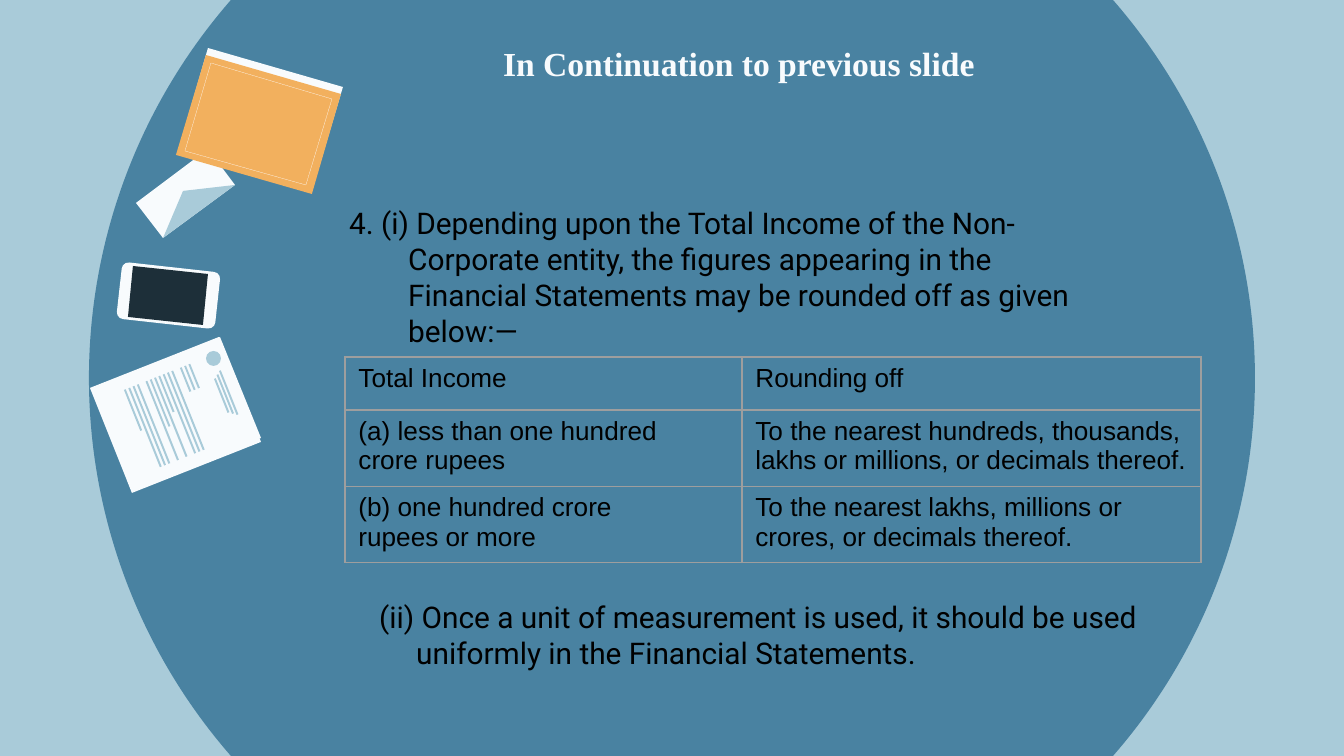
from dataclasses import dataclass

from lxml import etree
from pptx import Presentation
from pptx.dml.color import RGBColor
from pptx.enum.shapes import MSO_SHAPE
from pptx.enum.text import PP_ALIGN
from pptx.oxml.ns import qn
from pptx.util import Emu, Pt

OVAL = MSO_SHAPE.OVAL
ROUNDED = MSO_SHAPE.ROUNDED_RECTANGLE
CENTER = PP_ALIGN.CENTER
JUSTIFY = PP_ALIGN.JUSTIFY

EMU_PER_PX = 914400 / 134.4
COLORS = {
    "sky": "A9CBD9",
    "blue": "4982A1",
    "paper": "F8FBFD",
    "screen": "1D2F39",
    "folder": "F2B05E",
    "white": "FFFFFF",
    "black": "000000",
    "border": "9E9E9E",
}


@dataclass
class Polygon:
    points: list[tuple[float, float]]
    color: str


@dataclass
class Line:
    text: str
    indent: int = 0
    space_before: int = 0


PAGE = [
    Polygon([(90, 388), (132, 493), (261, 442), (219, 337)], "paper"),
    Polygon([(220, 454), (179, 470), (138, 370), (180, 353)], "paper"),
    Polygon([(180, 353), (220, 454), (261, 438), (220, 337)], "paper"),
]
# Drop of each text stripe on the page; 0 leaves a gap between blocks.
BODY_STRIPES = [41, 79, 79, 79, 0, 79, 47, 79, 36, 79, 79, 79, 0, 24, 24, 24]
HEADER_STRIPES = [34, 39, 44]

ENVELOPE = [
    Polygon([(163, 238), (235, 185), (208, 149), (136, 203)], "paper"),
    Polygon([(183, 191), (235, 185), (163, 238)], "sky"),
]
PHONE_SCREEN = Polygon([(203, 325), (128, 317), (133, 266), (208, 274)], "screen")
FOLDER = [
    Polygon([(179, 148), (208, 48), (343, 87), (313, 187)], "paper"),
    Polygon([(176, 155), (206, 55), (341, 94), (312, 194)], "folder"),
]
FOLDER_FRAME = Polygon([(332, 99), (211, 63), (185, 151), (306, 185)], "white")

TITLE = [Line("In Continuation to previous slide")]
BODY = [
    Line("4. (i) Depending upon the Total Income of the Non-"),
    Line("Corporate entity, the figures appearing in the", 59),
    Line("Financial Statements may be rounded off as given", 59),
    Line("below:—", 59),
    Line("(ii) Once a unit of measurement is used, it should be used", 30, 134),
    Line("uniformly in the Financial Statements.", 67),
]
COLUMN_WIDTHS = [397, 459]
ROW_HEIGHTS = [53, 76, 76]
ROUNDING = [
    ("Total Income", "Rounding off"),
    (
        "(a) less than one hundred\ncrore rupees",
        "To the nearest hundreds, thousands, lakhs or millions, or decimals thereof.",
    ),
    (
        "(b) one hundred crore\nrupees or more",
        "To the nearest lakhs, millions or crores, or decimals thereof.",
    ),
]


def px(value: float) -> Emu:
    return Emu(round(value * EMU_PER_PX))


def rgb(name: str) -> RGBColor:
    return RGBColor.from_string(COLORS[name])


def paint(sp, color: str) -> None:
    sp.shadow.inherit = False
    sp.fill.solid()
    sp.fill.fore_color.rgb = rgb(color)
    sp.line.fill.background()


def add_polygon(slide, polygon: Polygon, outline: bool = False) -> None:
    start, *rest = [(px(x), px(y)) for x, y in polygon.points]
    builder = slide.shapes.build_freeform(*start)
    builder.add_line_segments(rest, close=True)
    sp = builder.convert_to_shape()
    paint(sp, polygon.color)
    if outline:
        sp.fill.background()
        sp.line.color.rgb = rgb(polygon.color)
        sp.line.width = Pt(0.12)


def add_preset(slide, kind, x: int, y: int, w: int, h: int, color: str):
    sp = slide.shapes.add_shape(kind, px(x), px(y), px(w), px(h))
    paint(sp, color)
    return sp


def add_stripes(slide, drops: list[int], x: int, y: int, dx: float, dy: float) -> None:
    """Draw slanted stripes whose tops advance by (dx, dy)."""
    for i, drop in enumerate(drops):
        if drop:
            left, top = x + i * dx, y + i * dy
            right, bottom = left + 0.4 * drop, top + drop
            points = [(left, top), (right, bottom), (right + 1.8, bottom - 0.7), (left + 1.8, top - 0.7)]
            add_polygon(slide, Polygon(points, "sky"))


def set_font(p, name: str, size: int, color: str, bold: bool = False) -> None:
    p.font.name = name
    p.font.size = Pt(size)
    p.font.bold = bold
    p.font.color.rgb = rgb(color)


def add_text(slide, x: int, y: int, w: int, h: int, lines: list[Line], align,
             name: str, size: int, color: str, bold: bool = False, top: int = 7) -> None:
    tf = slide.shapes.add_textbox(px(x), px(y), px(w), px(h)).text_frame
    tf.word_wrap = True
    tf.margin_top = px(top)
    for i, line in enumerate(lines):
        p = tf.add_paragraph() if i else tf.paragraphs[0]
        p.text = line.text
        p.alignment = align
        p.space_before = Pt(line.space_before)
        p._p.get_or_add_pPr().set("marL", str(px(line.indent)))
        set_font(p, name, size, color, bold)


def set_borders(cell) -> None:
    tc_pr = cell._tc.get_or_add_tcPr()
    for i, side in enumerate(("lnL", "lnR", "lnT", "lnB")):
        ln = etree.Element(qn(f"a:{side}"), w=str(Pt(0.75)))
        fill = etree.SubElement(ln, qn("a:solidFill"))
        etree.SubElement(fill, qn("a:srgbClr"), val=COLORS["border"])
        tc_pr.insert(i, ln)


def add_rounding_table(slide, x: int, y: int) -> None:
    table = slide.shapes.add_table(
        len(ROW_HEIGHTS), len(COLUMN_WIDTHS), px(x), px(y),
        px(sum(COLUMN_WIDTHS)), px(sum(ROW_HEIGHTS))).table
    table.first_row = table.horz_banding = False
    for column, width in zip(table.columns, COLUMN_WIDTHS):
        column.width = px(width)
    for row, height, texts in zip(table.rows, ROW_HEIGHTS, ROUNDING):
        row.height = px(height)
        for cell, text in zip(row.cells, texts):
            cell.text = text
            cell.fill.background()
            set_borders(cell)
            for p in cell.text_frame.paragraphs:
                set_font(p, "Arial", 14, "black")


def main() -> None:
    prs = Presentation()
    prs.slide_width, prs.slide_height = px(1344), px(756)
    slide = prs.slides.add_slide(prs.slide_layouts[6])
    slide.background.fill.solid()
    slide.background.fill.fore_color.rgb = rgb("sky")
    add_preset(slide, OVAL, 89, -200, 1166, 1156, "blue")
    add_text(slide, 431, 30, 616, 85, TITLE, CENTER, "Times New Roman", 18, "paper", True, top=13)

    for polygon in PAGE:
        add_polygon(slide, polygon)
    add_stripes(slide, HEADER_STRIPES, 214, 379, 2.5, -4)
    add_stripes(slide, BODY_STRIPES, 124, 390, 4.3, -1.7)
    add_preset(slide, OVAL, 206, 351, 15, 15, "sky")

    for polygon in ENVELOPE:
        add_polygon(slide, polygon)
    phone = add_preset(slide, ROUNDED, 119, 267, 99, 57, "paper")
    phone.adjustments[0] = 0.12
    phone.rotation = 6.3
    add_polygon(slide, PHONE_SCREEN)
    for polygon in FOLDER:
        add_polygon(slide, polygon)
    add_polygon(slide, FOLDER_FRAME, outline=True)

    add_text(slide, 336, 198, 860, 484, BODY, JUSTIFY, "Roboto", 16, "black")
    add_rounding_table(slide, 345, 357)
    prs.save("out.pptx")


if __name__ == "__main__":
    main()
